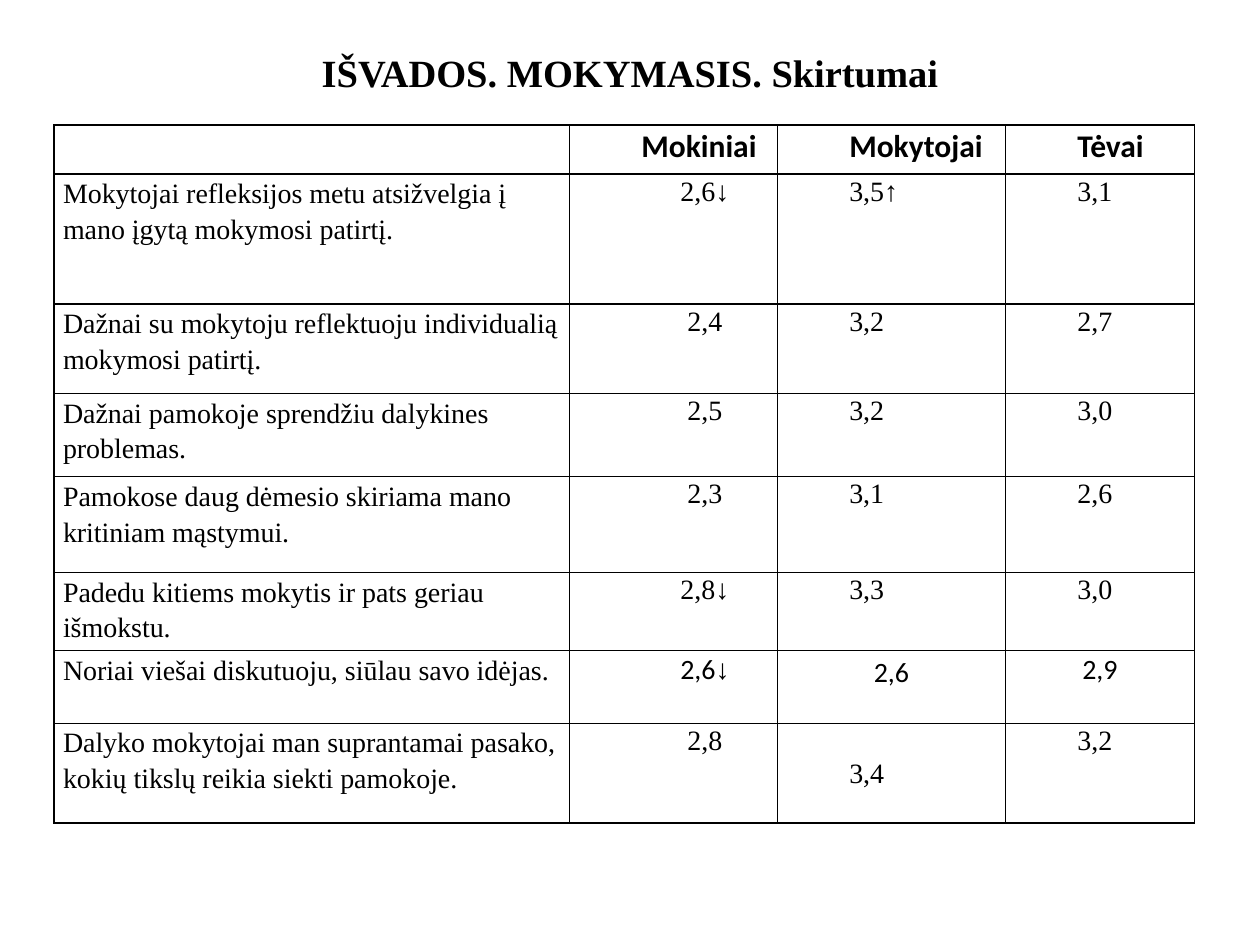
from dataclasses import dataclass

from lxml.etree import SubElement
from pptx import Presentation
from pptx.dml.color import RGBColor
from pptx.enum.text import MSO_ANCHOR, PP_ALIGN
from pptx.oxml import parse_xml
from pptx.oxml.ns import nsdecls, qn
from pptx.util import Cm, Pt


@dataclass(frozen=True)
class Theme:
    ink: RGBColor = RGBColor(0, 0, 0)
    paper: RGBColor = RGBColor(255, 255, 255)
    serif: str = "Times New Roman"
    sans: str = "Calibri"
    title_size: Pt = Pt(22)
    header_size: Pt = Pt(18)
    body_size: Pt = Pt(16)
    border: Pt = Pt(1)
    indent: Cm = Cm(1.27)
    cell_inset: Cm = Cm(0.18)


THEME = Theme()
TITLE = "IŠVADOS. MOKYMASIS. Skirtumai"
GROUPS = ["Mokiniai", "Mokytojai", "Tėvai"]
STATEMENTS = [
    ("Mokytojai refleksijos metu atsižvelgia į mano įgytą mokymosi patirtį.", "2,6↓", "3,5↑", "3,1"),
    ("Dažnai su mokytoju reflektuoju individualią mokymosi patirtį.", "2,4", "3,2", "2,7"),
    ("Dažnai pamokoje sprendžiu dalykines problemas.", "2,5", "3,2", "3,0"),
    ("Pamokose daug dėmesio skiriama mano kritiniam mąstymui.", "2,3", "3,1", "2,6"),
    ("Padedu kitiems mokytis ir pats geriau išmokstu.", "2,8↓", "3,3", "3,0"),
    ("Noriai viešai diskutuoju, siūlau savo idėjas.", "2,6↓", "2,6", "2,9"),
    ("Dalyko mokytojai man suprantamai pasako, kokių tikslų reikia siekti pamokoje.", "2,8", "3,4", "3,2"),
]
DISCUSSION_ROW = 6
GOALS_ROW = 7
COLUMN_WIDTHS = [10.39, 4.19, 4.6, 3.81]
ROW_HEIGHTS = [0.99, 2.62, 1.8, 1.68, 1.93, 1.57, 1.47, 2.01]


def add_span(para, text, size, font=THEME.serif, bold=False):
    span = para.add_run()
    span.text = text
    span.font.name = font
    span.font.size = size
    span.font.bold = bold
    span.font.color.rgb = THEME.ink


def format_para(para, align=PP_ALIGN.LEFT, spacing=1.07, after=0, indent=0):
    para.alignment = align
    para.line_spacing = spacing
    para.space_after = Pt(after)
    properties = para._p.get_or_add_pPr()
    properties.set("marL", str(indent))
    properties.set("indent", "0")


def add_title(page):
    box = page.shapes.add_textbox(Cm(1.27), Cm(0.76), Cm(22.86), Cm(1.37))
    frame = box.text_frame
    frame.word_wrap = True
    frame.vertical_anchor = MSO_ANCHOR.MIDDLE
    para = frame.paragraphs[0]
    para.alignment = PP_ALIGN.CENTER
    add_span(para, TITLE, THEME.title_size, bold=True)


def style_cell(cell):
    cell.margin_left = cell.margin_right = THEME.cell_inset
    cell.margin_top = cell.margin_bottom = 0
    cell.fill.solid()
    cell.fill.fore_color.rgb = THEME.paper
    properties = cell._tc.get_or_add_tcPr()
    for position, side in enumerate(("lnL", "lnR", "lnT", "lnB")):
        line = parse_xml(f'<a:{side} {nsdecls("a")} w="{THEME.border}"/>')
        fill = SubElement(line, qn("a:solidFill"))
        SubElement(fill, qn("a:srgbClr"), val=str(THEME.ink))
        properties.insert(position, line)


def fill_header(cell, text):
    para = cell.text_frame.paragraphs[0]
    format_para(para, indent=THEME.indent)
    add_span(para, text, THEME.header_size, THEME.sans, bold=True)


def fill_statement(cell, text, row):
    para = cell.text_frame.paragraphs[0]
    format_para(para, spacing=1.15, after=0 if row == DISCUSSION_ROW else 10)
    add_span(para, text, THEME.body_size)


def fill_score(cell, text, row, column):
    discussion = row == DISCUSSION_ROW
    para = cell.text_frame.paragraphs[0]
    format_para(
        para,
        align=PP_ALIGN.CENTER if column == 1 or discussion else PP_ALIGN.LEFT,
        spacing=1.15 if discussion and column == 2 else 1.07,
        indent=0 if discussion and column > 1 else THEME.indent,
    )
    number = text.rstrip("↓↑")
    add_span(para, number, THEME.body_size, THEME.sans if discussion else THEME.serif)
    if number != text:
        add_span(para, text[len(number):], THEME.body_size)
    if row == GOALS_ROW and column == 2:
        cell.vertical_anchor = MSO_ANCHOR.MIDDLE


def add_score_table(page):
    frame = page.shapes.add_table(
        len(ROW_HEIGHTS), len(COLUMN_WIDTHS), Cm(1.09), Cm(2.52),
        Cm(sum(COLUMN_WIDTHS)), Cm(sum(ROW_HEIGHTS)),
    )
    table = frame.table
    table.first_row = table.horz_banding = False
    for column, width in zip(table.columns, COLUMN_WIDTHS):
        column.width = Cm(width)
    for row, height in zip(table.rows, ROW_HEIGHTS):
        row.height = Cm(height)
    for cell in table.iter_cells():
        style_cell(cell)
    for column, group in enumerate(GROUPS, start=1):
        fill_header(table.cell(0, column), group)
    for row, (statement, *scores) in enumerate(STATEMENTS, start=1):
        fill_statement(table.cell(row, 0), statement, row)
        for column, score in enumerate(scores, start=1):
            fill_score(table.cell(row, column), score, row, column)


def main():
    deck = Presentation()
    deck.slide_width, deck.slide_height = Cm(25.4), Cm(19.05)
    page = deck.slides.add_slide(deck.slide_layouts[6])
    add_title(page)
    add_score_table(page)
    deck.save("out.pptx")


if __name__ == "__main__":
    main()
